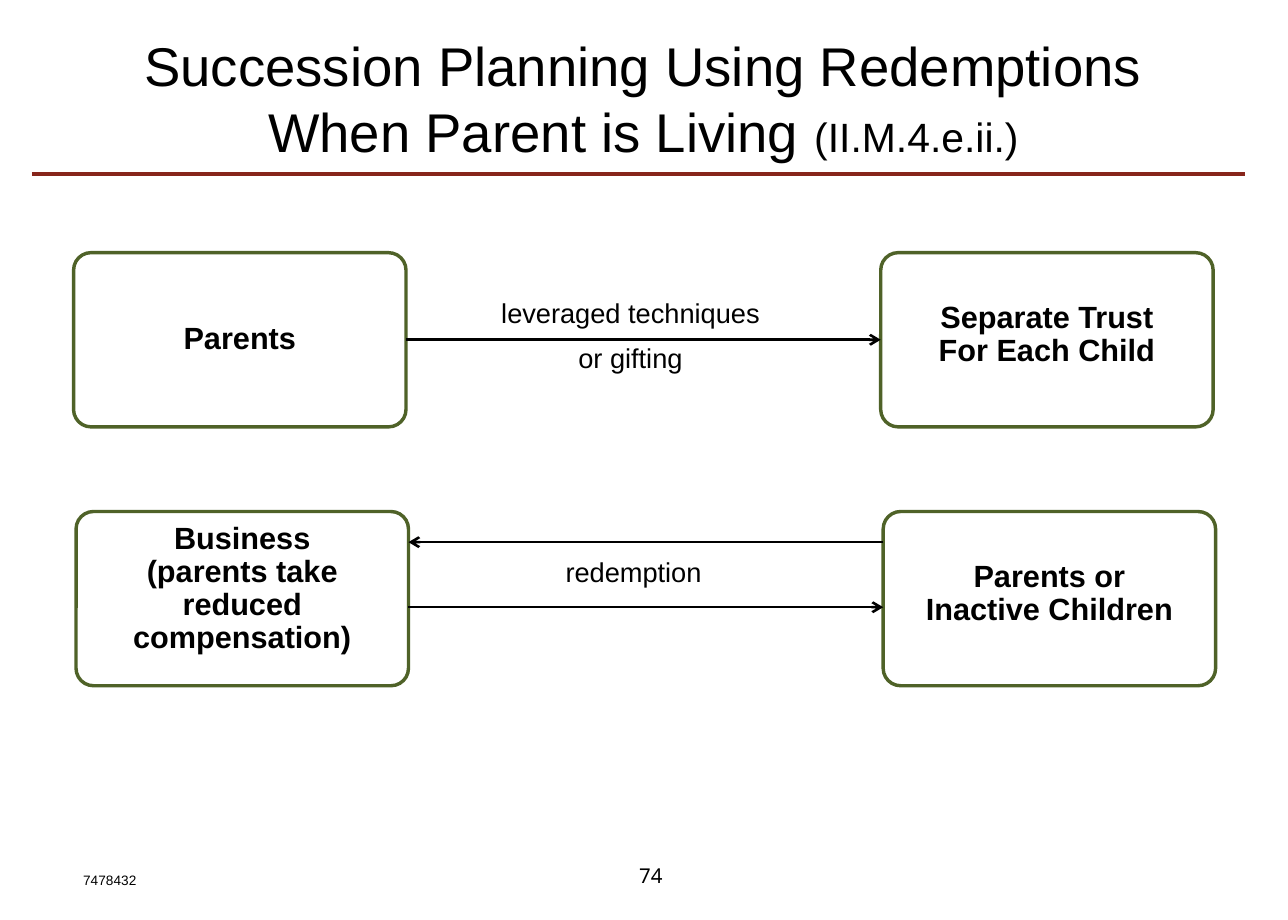
from dataclasses import dataclass

from lxml.etree import SubElement
from pptx import Presentation
from pptx.dml.color import RGBColor
from pptx.enum.shapes import MSO_CONNECTOR, MSO_SHAPE
from pptx.enum.text import MSO_ANCHOR, PP_ALIGN
from pptx.oxml.ns import qn
from pptx.shapes.autoshape import Shape
from pptx.shapes.connector import Connector
from pptx.shapes.shapetree import SlideShapes
from pptx.text.text import TextFrame
from pptx.util import Inches, Pt

BLACK = RGBColor(0x00, 0x00, 0x00)
WHITE = RGBColor(0xFF, 0xFF, 0xFF)
GREEN = RGBColor(0x4F, 0x62, 0x28)
RED = RGBColor(0x87, 0x25, 0x1B)

# The slide is a grid of 105 columns by 75 rows of equal squares.
COLUMNS, ROWS = 105, 75
SLIDE_WIDTH, SLIDE_HEIGHT = Inches(10.5), Inches(7.5)
PARTY_COLUMNS, PARTY_ROWS = 27.1, 14.2
PARTY_PITCH = 65.8


@dataclass(frozen=True)
class Party:
    column: float
    row: float
    lines: tuple[str, ...]
    text_drop: float


@dataclass(frozen=True)
class Caption:
    column: float
    row: float
    columns: float
    rows: float
    text: str
    size: float = 16
    font: str = "Arial"
    align: PP_ALIGN = PP_ALIGN.CENTER
    anchor: MSO_ANCHOR = MSO_ANCHOR.TOP
    spacing: float = 0.9


@dataclass(frozen=True)
class Flow:
    start: float
    end: float
    row: float


GIFT_COLUMN, REDEMPTION_COLUMN = 6, 6.2
GIVER = Party(GIFT_COLUMN, 20.6, ("Parents",), 5.3)
TRUST = Party(GIFT_COLUMN + PARTY_PITCH, 20.6,
              ("Separate Trust", "For Each Child"), 3.6)
BUSINESS = Party(REDEMPTION_COLUMN, 41.7,
                 ("Business", "(parents take reduced compensation)"), 0.5)
OWNERS = Party(REDEMPTION_COLUMN + PARTY_PITCH, 41.7,
               ("Parents or", "Inactive Children"), 3.6)

BUSINESS_EDGE = BUSINESS.column + PARTY_COLUMNS
REDEMPTION_FLOWS = (
    Flow(BUSINESS_EDGE, OWNERS.column, 49.5),
    Flow(OWNERS.column, BUSINESS_EDGE, 44.2),
)

TITLE = Caption(5.2, 1.7, 94.5, 12.5,
                "Succession Planning Using Redemptions When Parent is Living ",
                size=32, anchor=MSO_ANCHOR.MIDDLE, spacing=1)
CAPTIONS = (
    Caption(36.5, 24, 29.8, 4.2, "leveraged techniques"),
    Caption(36.5, 27.6, 29.8, 4.2, "or gifting"),
    Caption(36.8, 45.1, 29.7, 4.2, "redemption"),
    Caption(49.7, 69.4, 5.3, 4, "74", size=12, font="Noto Sans",
            align=PP_ALIGN.RIGHT, anchor=MSO_ANCHOR.MIDDLE, spacing=1),
    Caption(5.8, 70.6, 19.3, 2.4, "7478432", size=8,
            align=PP_ALIGN.LEFT, spacing=1),
)


def across(columns: float) -> int:
    return round(SLIDE_WIDTH * columns / COLUMNS)


def down(rows: float) -> int:
    return round(SLIDE_HEIGHT * rows / ROWS)


def style_text(frame: TextFrame, size: float, font: str = "Arial",
               align: PP_ALIGN = PP_ALIGN.CENTER, spacing: float = 0.9,
               bold: bool = False) -> None:
    frame.word_wrap = True
    for paragraph in frame.paragraphs:
        paragraph.alignment = align
        paragraph.line_spacing = spacing
        for run in paragraph.runs:
            run.font.name = font
            run.font.size = Pt(size)
            run.font.bold = bold
            run.font.color.rgb = BLACK


def draw_party(shapes: SlideShapes, party: Party) -> Shape:
    box = shapes.add_shape(MSO_SHAPE.ROUNDED_RECTANGLE,
                           across(party.column), down(party.row),
                           across(PARTY_COLUMNS), down(PARTY_ROWS))
    box.adjustments[0] = 0.1
    box.shadow.inherit = False
    box.fill.solid()
    box.fill.fore_color.rgb = WHITE
    box.line.color.rgb = GREEN
    box.line.width = Pt(2)
    frame = box.text_frame
    frame.text = "\n".join(party.lines)
    frame.vertical_anchor = MSO_ANCHOR.TOP
    frame.margin_top = down(party.text_drop)
    style_text(frame, 18, bold=True)
    return box


def draw_caption(shapes: SlideShapes, caption: Caption) -> TextFrame:
    box = shapes.add_textbox(across(caption.column), down(caption.row),
                             across(caption.columns), down(caption.rows))
    frame = box.text_frame
    frame.text = caption.text
    frame.vertical_anchor = caption.anchor
    style_text(frame, caption.size, caption.font, caption.align, caption.spacing)
    return frame


def draw_level_line(shapes: SlideShapes, flow: Flow, color: RGBColor = BLACK,
                    width: float = 1.5, arrow: bool = True) -> Connector:
    line = shapes.add_connector(MSO_CONNECTOR.STRAIGHT,
                                across(flow.start), down(flow.row),
                                across(flow.end), down(flow.row))
    line.line.color.rgb = color
    line.line.width = Pt(width)
    if arrow:
        SubElement(line.line._get_or_add_ln(), qn("a:tailEnd"), type="arrow")
    SubElement(line._element.spPr, qn("a:effectLst"))
    return line


def main() -> None:
    deck = Presentation()
    deck.slide_width, deck.slide_height = SLIDE_WIDTH, SLIDE_HEIGHT
    shapes = deck.slides.add_slide(deck.slide_layouts[6]).shapes

    draw_level_line(shapes, Flow(2.6, 101.5, 14.2), RED, 2.75, arrow=False)
    title = draw_caption(shapes, TITLE)
    section = title.paragraphs[0].add_run()
    section.text = "(II.M.4.e.ii.)"
    style_text(title, TITLE.size, spacing=TITLE.spacing)
    section.font.size = Pt(24)

    giver, trust, _, _ = [draw_party(shapes, party)
                          for party in (GIVER, TRUST, BUSINESS, OWNERS)]
    gift = draw_level_line(shapes, Flow(GIVER.column + PARTY_COLUMNS, TRUST.column,
                                        GIVER.row + PARTY_ROWS / 2))
    gift.begin_connect(giver, 3)
    gift.end_connect(trust, 1)
    for flow in REDEMPTION_FLOWS:
        draw_level_line(shapes, flow)
    for caption in CAPTIONS:
        draw_caption(shapes, caption)

    deck.save("out.pptx")


if __name__ == "__main__":
    main()
